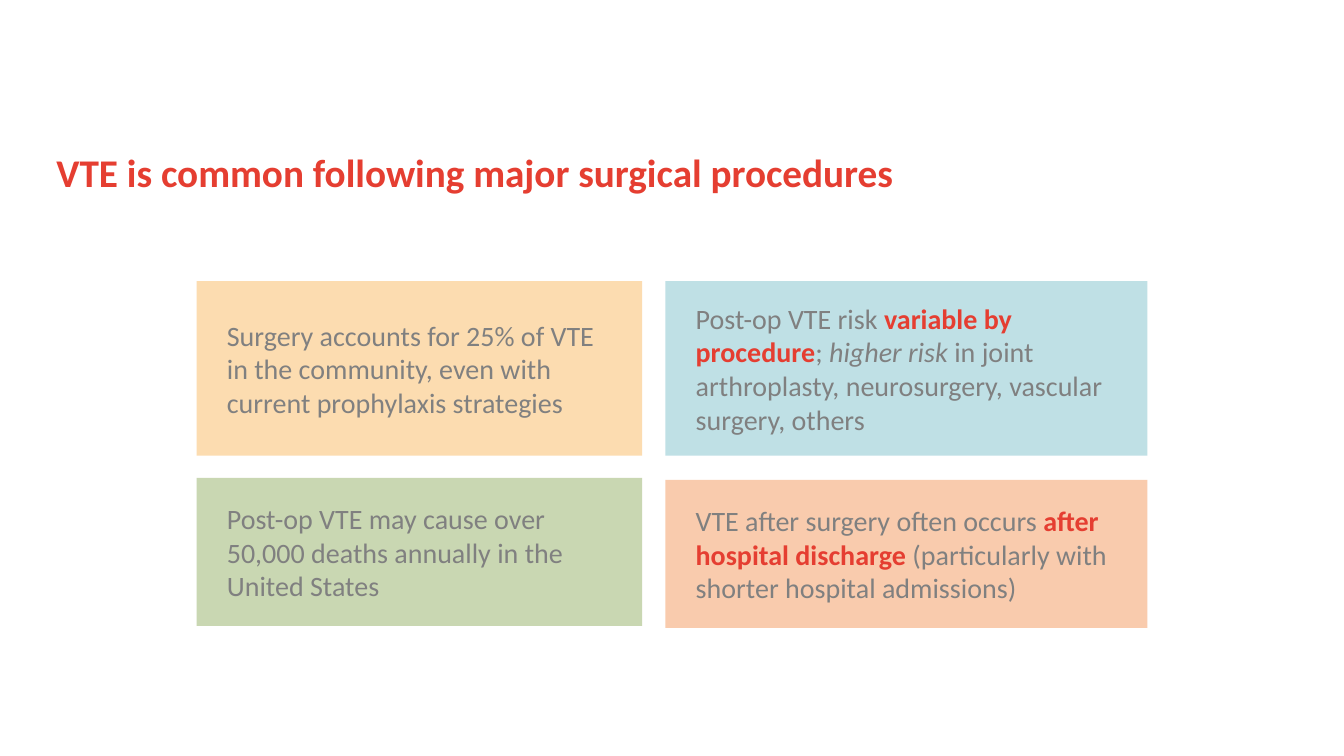
"""Build a slide on how common VTE is after major surgery."""
import pptx
import pptx.util
import pptx.dml.color
import pptx.enum.shapes
import pptx.enum.text

Inches = pptx.util.Inches
Pt = pptx.util.Pt
Anchor = pptx.enum.text.MSO_ANCHOR


def paint(target, color):
    target.rgb = pptx.dml.color.RGBColor.from_string(color)


def style(font, size, color):
    font.name = "Calibri"
    font.size = Pt(size)
    paint(font.color, color)


deck = pptx.Presentation()
deck.slide_width = Inches(13.33)
deck.slide_height = Inches(7.5)
slide = deck.slides.add_slide(deck.slide_layouts[5])

title = slide.shapes.title
title.left, title.top = Inches(0.46), Inches(1.47)
title.width, title.height = Inches(12), Inches(0.78)
title.text_frame.vertical_anchor = Anchor.TOP
head = title.text_frame.paragraphs[0]
head.text = "VTE is common following major surgical procedures"
head.alignment = pptx.enum.text.PP_ALIGN.LEFT
head.line_spacing = 0.9
style(head.font, 28, "E53E31")
head.font.bold = True

left, right = (1.95, 4.42), (6.6, 4.78)
cards = [
    (left, 2.79, 1.73, "FCDCB0", [
        ("Surgery accounts for 25% of VTE in the community, even with current prophylaxis strategies", "")]),
    (left, 4.74, 1.47, "C9D7B2", [
        ("Post-op VTE may cause over 50,000 deaths annually in the United States", "")]),
    (right, 4.76, 1.47, "F9CBAD", [
        ("VTE after surgery often occurs ", ""),
        ("after hospital discharge ", "bold"),
        ("(particularly with shorter hospital admissions)", "")]),
    (right, 2.79, 1.73, "BFE0E5", [
        ("Post-op VTE risk ", ""),
        ("variable by procedure", "bold"),
        ("; ", ""),
        ("higher risk", "italic"),
        (" in joint arthroplasty, neurosurgery, vascular surgery, others", "")]),
]

group = slide.shapes.add_group_shape()
for (x, width), y, height, fill, parts in cards:
    card = group.shapes.add_shape(
        pptx.enum.shapes.MSO_SHAPE.RECTANGLE,
        Inches(x), Inches(y), Inches(width), Inches(height))
    card.shadow.inherit = False
    card.fill.solid()
    paint(card.fill.fore_color, fill)
    card.line.fill.background()
    frame = card.text_frame
    frame.word_wrap = True
    frame.vertical_anchor = Anchor.MIDDLE
    frame.margin_left = frame.margin_right = Inches(0.3)
    frame.margin_top = frame.margin_bottom = Inches(0.3)
    para = frame.paragraphs[0]
    para.alignment = pptx.enum.text.PP_ALIGN.LEFT
    style(para.font, 20, "808080")
    for text, mark in parts:
        run = para.add_run()
        run.text = text
        if mark == "bold":
            run.font.bold = True
            paint(run.font.color, "E53E31")
        elif mark == "italic":
            run.font.italic = True

deck.save("out.pptx")
